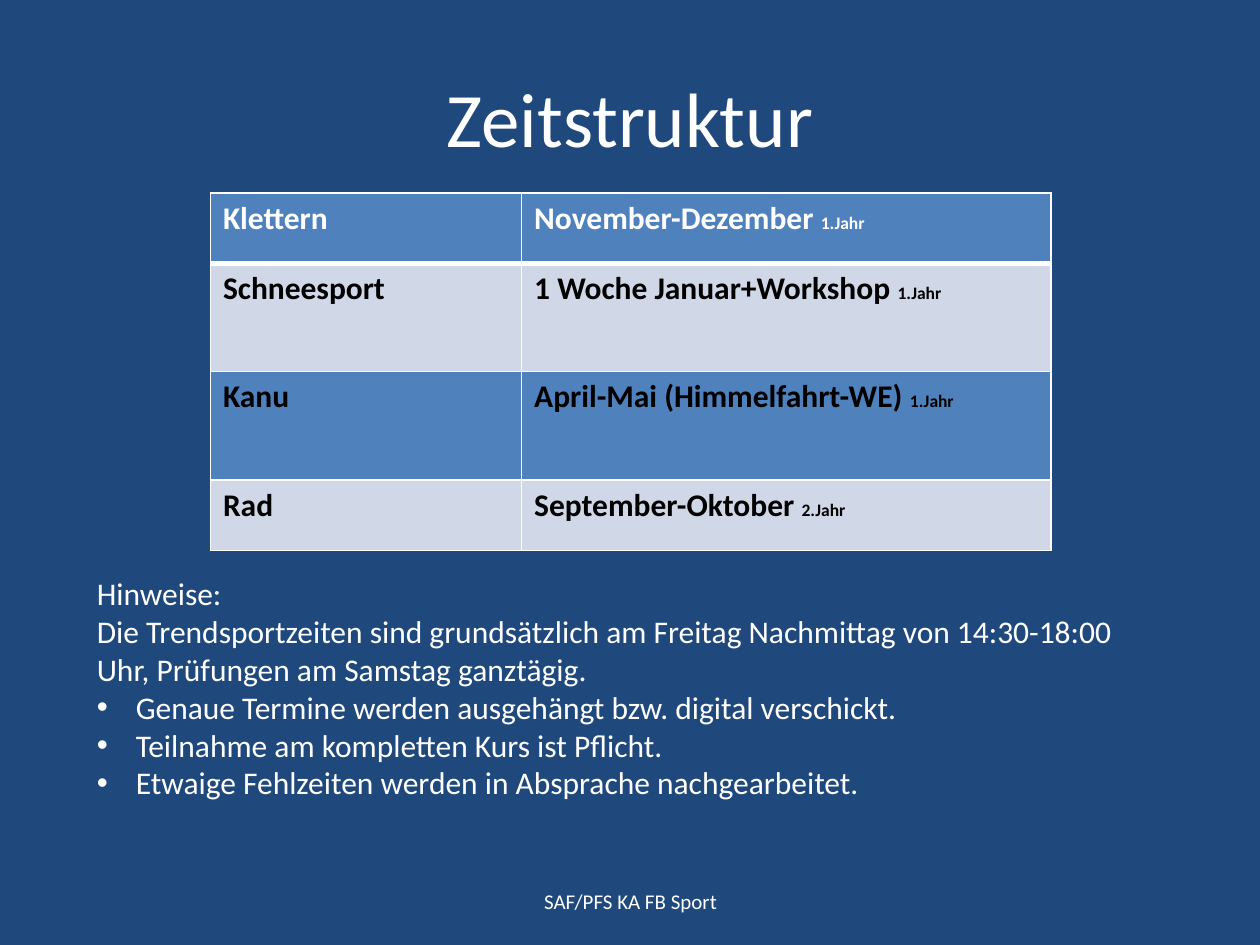
from lxml.etree import SubElement
from pptx import Presentation
from pptx.dml.color import RGBColor
from pptx.enum.text import MSO_ANCHOR, PP_ALIGN
from pptx.oxml.ns import qn
from pptx.util import Inches, Pt

NAVY = RGBColor(0x1F, 0x49, 0x7D)
BLUE = RGBColor(0x4F, 0x81, 0xBD)
PALE = RGBColor(0xD0, 0xD8, 0xE8)
WHITE = RGBColor(0xFF, 0xFF, 0xFF)
BLACK = RGBColor(0x00, 0x00, 0x00)
FONT = "Calibri"

SCHEDULE = [
    ("Klettern", "November-Dezember ", "1.Jahr"),
    ("Schneesport", "1 Woche Januar+Workshop ", "1.Jahr"),
    ("Kanu", "April-Mai (Himmelfahrt-WE) ", "1.Jahr"),
    ("Rad", "September-Oktober ", "2.Jahr"),
]
COLUMN_WIDTHS = (2.47, 4.2)
ROW_HEIGHTS = (0.56, 0.86, 0.86, 0.56)
INTRO = [
    "Hinweise:",
    "Die Trendsportzeiten sind grundsätzlich am Freitag Nachmittag von "
    "14:30-18:00 Uhr, Prüfungen am Samstag ganztägig.",
]
RULES = [
    "Genaue Termine werden ausgehängt bzw. digital verschickt.",
    "Teilnahme am kompletten Kurs ist Pflicht.",
    "Etwaige Fehlzeiten werden in Absprache nachgearbeitet.",
]


def add_text(para, text, size=18, color=WHITE, bold=False, align=None):
    span = para.add_run()
    span.text = text
    span.font.name = FONT
    span.font.size = Pt(size)
    span.font.bold = bold
    span.font.color.rgb = color
    if align is not None:
        para.alignment = align


def add_frame(page, box, anchor=MSO_ANCHOR.TOP):
    frame = page.shapes.add_textbox(*map(Inches, box)).text_frame
    frame.word_wrap = True
    frame.vertical_anchor = anchor
    return frame


def add_centred_line(page, box, text, size):
    frame = add_frame(page, box, MSO_ANCHOR.MIDDLE)
    add_text(frame.paragraphs[0], text, size=size, align=PP_ALIGN.CENTER)


def set_borders(cell, **widths):
    """Draw white cell edges; widths are points by side L, R, T, B."""
    properties = cell._tc.get_or_add_tcPr()
    for side, width in widths.items():
        line = SubElement(properties, qn(f"a:ln{side}"), w=str(Pt(width)))
        fill = SubElement(line, qn("a:solidFill"))
        SubElement(fill, qn("a:srgbClr"), val=str(WHITE))


def add_schedule(page, box):
    table = page.shapes.add_table(
        len(SCHEDULE), len(COLUMN_WIDTHS), *map(Inches, box)).table
    for column, width in zip(table.columns, COLUMN_WIDTHS):
        column.width = Inches(width)
    for index, (sport, period, year) in enumerate(SCHEDULE):
        table.rows[index].height = Inches(ROW_HEIGHTS[index])
        color = WHITE if index == 0 else BLACK
        sport_cell, period_cell = table.rows[index].cells
        for cell in (sport_cell, period_cell):
            set_borders(cell, L=1, R=1, T=3 if index == 1 else 1,
                        B=3 if index == 0 else 1)
            cell.fill.solid()
            cell.fill.fore_color.rgb = PALE if index % 2 else BLUE
        add_text(sport_cell.text_frame.paragraphs[0], sport,
                 color=color, bold=True)
        para = period_cell.text_frame.paragraphs[0]
        add_text(para, period, color=color, bold=True)
        add_text(para, year, size=10, color=color, bold=True)


def add_bullet(para, indent):
    properties = para._p.get_or_add_pPr()
    properties.set("marL", str(Inches(indent)))
    properties.set("indent", str(-Inches(indent)))
    SubElement(properties, qn("a:buFont"), typeface="Arial")
    SubElement(properties, qn("a:buChar"), char="•")


def add_notes(page, box):
    frame = add_frame(page, box)
    for index, text in enumerate(INTRO + RULES):
        para = frame.add_paragraph() if index else frame.paragraphs[0]
        if index >= len(INTRO):
            add_bullet(para, 0.31)
        add_text(para, text)


def main():
    deck = Presentation()
    deck.slide_width, deck.slide_height = Inches(10), Inches(7.5)
    page = deck.slides.add_slide(deck.slide_layouts[6])
    page.background.fill.solid()
    page.background.fill.fore_color.rgb = NAVY
    add_centred_line(page, (0.5, 0.3, 9, 1.25), "Zeitstruktur", 44)
    add_centred_line(page, (3.42, 6.95, 3.17, 0.4), "SAF/PFS KA FB Sport", 12)
    add_schedule(page, (1.67, 1.53, sum(COLUMN_WIDTHS), sum(ROW_HEIGHTS)))
    add_notes(page, (0.67, 4.51, 8.43, 1.92))
    deck.save("out.pptx")


if __name__ == "__main__":
    main()
